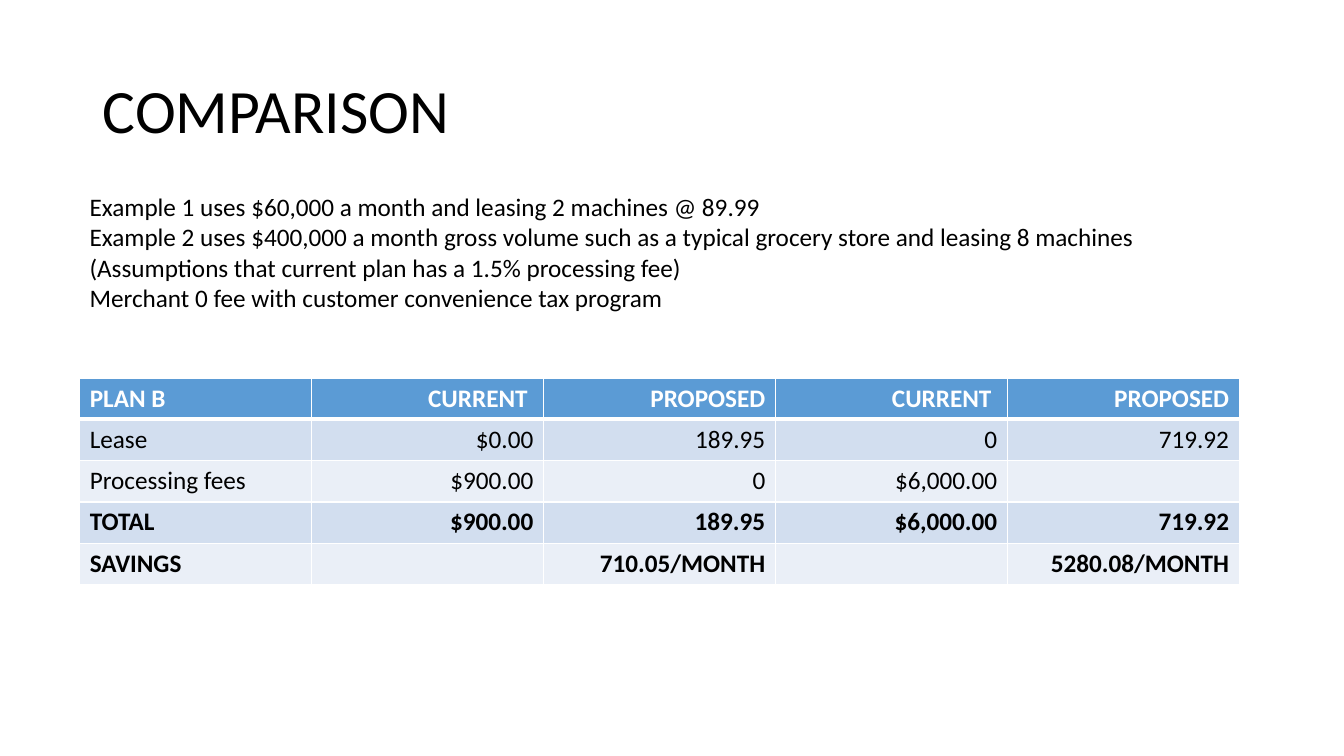
from dataclasses import dataclass

from lxml.etree import SubElement
from pptx import Presentation
from pptx.dml.color import RGBColor
from pptx.enum.text import MSO_ANCHOR as Anchor, MSO_AUTO_SIZE as Fit, PP_ALIGN as Align
from pptx.oxml.ns import qn
from pptx.util import Inches, Pt

LEFT, WIDE = 0.79, 11.5
COL, ROW = 2.3, 0.41
BLACK, WHITE = "000000", "FFFFFF"
BLUE, MID, PALE = "5B9BD5", "D2DEEF", "EAEFF7"

NOTES = (
    "Example 1 uses $60,000 a month and leasing 2 machines @ 89.99",
    "Example 2 uses $400,000 a month gross volume such as a typical grocery store and leasing 8 machines",
    "(Assumptions that current plan has a 1.5% processing fee)",
    "Merchant 0 fee with customer convenience tax program",
)


@dataclass(frozen=True)
class Row:
    cells: tuple[str, ...]
    fill: str
    color: str = BLACK
    bold: bool = False


ROWS = (
    Row(("PLAN B", "CURRENT ", "PROPOSED", "CURRENT ", "PROPOSED"), BLUE, WHITE, True),
    Row(("Lease", "$0.00", "189.95", "0", "719.92"), MID),
    Row(("Processing fees", "$900.00", "0", "$6,000.00", ""), PALE),
    Row(("TOTAL", "$900.00", "189.95", "$6,000.00", "719.92"), MID, bold=True),
    Row(("SAVINGS", "", "710.05/MONTH", "", "5280.08/MONTH"), PALE, bold=True),
)


def rgb(code: str) -> RGBColor:
    return RGBColor.from_string(code)


def style(para, size: float, color: str = BLACK, bold: bool = False, align=Align.LEFT) -> None:
    para.alignment = align
    form = {"name": "Calibri", "size": Pt(size), "bold": bold}
    for key, value in form.items():
        setattr(para.font, key, value)
    para.font.color.rgb = rgb(color)
    for run in para.runs:
        for key, value in form.items():
            setattr(run.font, key, value)
        run.font.color.rgb = rgb(color)


def edge(cell, top: float, bottom: float) -> None:
    """Give a cell white borders, with the top and bottom widths in points."""
    props = cell._tc.get_or_add_tcPr()
    for side, width in {"L": 1, "R": 1, "T": top, "B": bottom}.items():
        line = SubElement(props, qn(f"a:ln{side}"), w=str(Pt(width)))
        fill = SubElement(line, qn("a:solidFill"))
        SubElement(fill, qn("a:srgbClr"), val=WHITE)


def add_title(slide) -> None:
    title = slide.shapes.title
    place = {"left": 0.92, "top": 0.4, "width": WIDE, "height": 1.45}
    for key, value in place.items():
        setattr(title, key, Inches(value))
    frame = title.text_frame
    frame.text = "COMPARISON"
    frame.auto_size = Fit.NONE
    frame.vertical_anchor = Anchor.MIDDLE
    frame.paragraphs[0].line_spacing = 0.9
    style(frame.paragraphs[0], 44)


def add_plans(slide) -> None:
    count = len(ROWS[0].cells)
    table = slide.shapes.add_table(
        len(ROWS), count, Inches(LEFT), Inches(3.75),
        Inches(COL * count), Inches(ROW * len(ROWS)),
    ).table
    for col in table.columns:
        col.width = Inches(COL)
    for i, row in enumerate(ROWS):
        table.rows[i].height = Inches(ROW)
        for j, text in enumerate(row.cells):
            cell = table.cell(i, j)
            cell.text = text
            edge(cell, top=3 if i == 1 else 1, bottom=3 if i == 0 else 1)
            cell.fill.solid()
            cell.fill.fore_color.rgb = rgb(row.fill)
            align = Align.RIGHT if j else Align.LEFT
            style(cell.text_frame.paragraphs[0], 18, row.color, row.bold, align)


def add_notes(slide) -> None:
    box = slide.shapes.add_textbox(Inches(LEFT), Inches(1.85), Inches(WIDE), Inches(1.31))
    frame = box.text_frame
    frame.word_wrap = True
    frame.auto_size = Fit.SHAPE_TO_FIT_TEXT
    frame.text = "\n".join(NOTES)
    for para in frame.paragraphs:
        style(para, 18)


def main() -> None:
    deck = Presentation()
    deck.slide_width, deck.slide_height = Inches(13.33), Inches(7.5)
    slide = deck.slides.add_slide(deck.slide_layouts.get_by_name("Title Only"))
    add_title(slide)
    add_plans(slide)
    add_notes(slide)
    deck.save("out.pptx")


if __name__ == "__main__":
    main()
